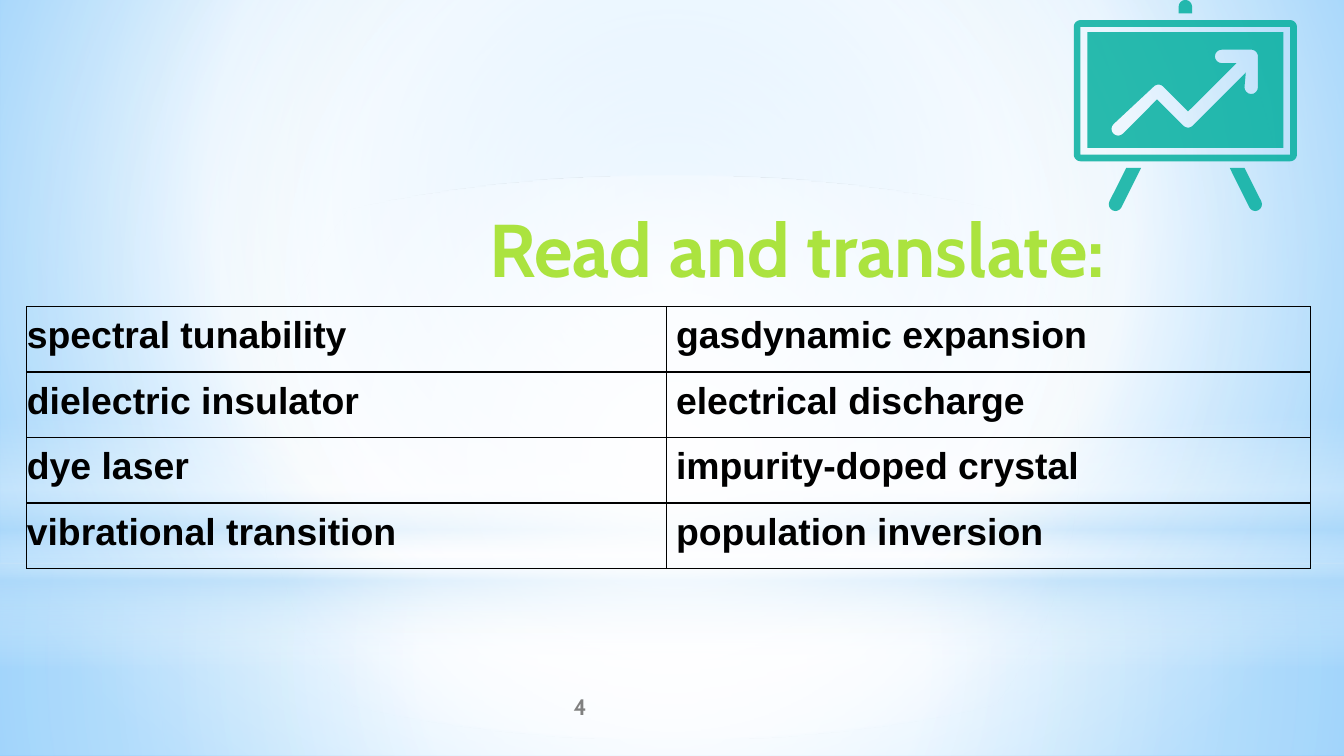
from dataclasses import dataclass
from math import cos, radians, sin

from lxml import etree
from pptx import Presentation
from pptx.dml.color import RGBColor
from pptx.enum.shapes import MSO_SHAPE
from pptx.enum.text import MSO_ANCHOR, MSO_AUTO_SIZE, PP_ALIGN
from pptx.oxml import parse_xml
from pptx.oxml.ns import nsdecls, qn
from pptx.util import Inches, Pt

RECT, OVAL = MSO_SHAPE.RECTANGLE, MSO_SHAPE.OVAL
TOP, LEFT, NO_FIT = MSO_ANCHOR.TOP, PP_ALIGN.LEFT, MSO_AUTO_SIZE.NONE


@dataclass(frozen=True)
class Theme:
    title: tuple = ("Cabin", 40, "ABE33F")
    number: tuple = ("Cabin", 12, "808080")
    term: tuple = ("Arial", 20, "000000")
    icon: str = "00AE9D"
    icon_alpha: int = 83
    border: str = "000000"
    white: str = "FFFFFF"
    sky: str = "B4DCFA"


THEME = Theme()
W = 10
H = W * 9 / 16
HORIZON = 4.19
CENTRE = (50, 50, 50, 50)

TITLE = "Read and translate:"
PAGE = "4"
TERMS = [
    ("spectral tunability", "gasdynamic expansion"),
    ("dielectric insulator", "electrical discharge"),
    ("dye laser", "impurity-doped crystal"),
    ("vibrational transition", "population inversion"),
]
COLUMNS, TABLE_HEIGHT = (4.76, 4.79), 1.95
INDENTS = (0, 0.07)

# Gradient stops: position, colour, opacity. The focus is a rectangle, or None for a vertical blend.
BACKDROP = ([(0, "9ED5FF", 100), (60, THEME.white, 100), (100, "5BB9FF", 100)], (20, 10, 20, 60))
LAYERS = [
    (RECT, (0, HORIZON, W, H - HORIZON),
     ([(0, THEME.white, 91), (37, THEME.white, 76), (100, THEME.sky, 79)], CENTRE)),
    (RECT, (0, 0, W, HORIZON),
     ([(0, THEME.white, 89), (48, THEME.white, 62), (100, THEME.sky, 79)], CENTRE)),
    (RECT, (0, 3.09, W, 1.88),
     ([(0, THEME.white, 0), (29, THEME.white, 30), (45, THEME.sky, 40),
       (55, THEME.white, 26), (65, THEME.sky, 60), (100, THEME.white, 0)], None)),
    (OVAL, (0, 1.31, W, HORIZON), ([(0, THEME.white, 100), (56, THEME.white, 0)], CENTRE)),
]


def arc(x, y, start, end, radius=0.05):
    """Points along an arc, in degrees clockwise from the right."""
    angles = [radians(start + (end - start) * step / 8) for step in range(9)]
    return [(x + radius * cos(a), y + radius * sin(a)) for a in angles]


def box(left, top, right, bottom):
    return [(left, top), (right, top), (right, bottom), (left, bottom)]


def mirrored(points, axis=8.82):
    return [(2 * axis - x, y) for x, y in points]


FRAME = (arc(8.04, 0.2, 180, 270) + arc(9.6, 0.2, 270, 360)
         + arc(9.6, 1.15, 0, 90) + arc(8.04, 1.15, 90, 180))
LEG = [(8.49, 1.25), (8.38, 1.25)] + arc(8.3, 1.52, 205, 25)
TREND_ARROW = (
    arc(9.31, 0.42, 270, 360) + arc(9.31, 0.65, 0, 180) + [(9.27, 0.54)]
    + arc(8.84, 0.9, 45, 135) + [(8.61, 0.74)] + arc(8.32, 0.96, 45, 225)
    + arc(8.62, 0.68, 225, 315) + [(8.84, 0.83), (9.2, 0.47)] + arc(9.09, 0.42, 90, 270))
EASEL = [
    [FRAME, box(8.04, 0.2, 9.6, 1.15)[::-1]],
    [arc(8.82, 0.05, 180, 360) + [(8.87, 0.1), (8.77, 0.1)]],
    [LEG],
    [mirrored(LEG)],
    [box(8.09, 0.24, 9.55, 1.1), TREND_ARROW[::-1]],
]


def paint_gradient(properties, stops, focus):
    """Swap the solid fill of a properties element for a gradient."""
    marks = "".join(
        f'<a:gs pos="{pos * 1000}"><a:srgbClr val="{color}">'
        f'<a:alpha val="{alpha * 1000}"/></a:srgbClr></a:gs>' for pos, color, alpha in stops)
    if focus:
        sides = " ".join(f'{side}="{share * 1000}"' for side, share in zip("ltrb", focus))
        direction = f'<a:path path="circle"><a:fillToRect {sides}/></a:path>'
    else:
        direction = '<a:lin ang="5400000" scaled="0"/>'
    gradient = parse_xml(f'<a:gradFill {nsdecls("a")} rotWithShape="1">'
                         f'<a:gsLst>{marks}</a:gsLst>{direction}</a:gradFill>')
    properties.replace(properties.find(qn("a:solidFill")), gradient)


def write(frame, text, style, margin, spacing=1.0):
    """Fill a text frame or table cell's frame with one bold, left-aligned line."""
    name, size, color = style
    for side in ("left", "top", "right", "bottom"):
        setattr(frame, f"margin_{side}", Inches(margin))
    frame.word_wrap = True
    line = frame.paragraphs[0]
    line.alignment, line.line_spacing = LEFT, spacing
    run = line.add_run()
    run.text = text
    for key, value in {"name": name, "size": Pt(size), "bold": True}.items():
        setattr(run.font, key, value)
    run.font.color.rgb = RGBColor.from_string(color)
    return line


def add_layers(slide):
    slide.background.fill.solid()
    paint_gradient(slide._element.find(".//" + qn("p:bgPr")), *BACKDROP)
    for kind, place, gradient in LAYERS:
        layer = slide.shapes.add_shape(kind, *map(Inches, place))
        layer.shadow.inherit = False
        layer.line.fill.background()
        layer.fill.solid()
        paint_gradient(layer._element.spPr, *gradient)


def add_title(slide):
    title = slide.shapes.title
    slide.shapes._spTree.append(title._element)  # in front of the background layers
    title.left, title.top, title.width, title.height = map(Inches, (3.54, 1.41, 6.46, 1.27))
    frame = title.text_frame
    frame.vertical_anchor, frame.auto_size = TOP, NO_FIT
    write(frame, TITLE, THEME.title, 0.1)


def add_easel(slide):
    easel = slide.shapes.add_group_shape()
    for contours in EASEL:
        outlines = [[(Inches(x), Inches(y)) for x, y in points] for points in contours]
        builder = easel.shapes.build_freeform(*outlines[0][0])
        builder.add_line_segments(outlines[0][1:])
        for hole in outlines[1:]:
            builder.move_to(*hole[0])
            builder.add_line_segments(hole[1:])
        part = builder.convert_to_shape()
        part.shadow.inherit = False
        part.line.fill.background()
        part.fill.solid()
        part.fill.fore_color.rgb = RGBColor.from_string(THEME.icon)
        color = part._element.spPr.find(qn("a:solidFill"))[0]
        etree.SubElement(color, qn("a:alpha")).set("val", str(THEME.icon_alpha * 1000))


def add_borders(cell):
    properties = cell._tc.get_or_add_tcPr()
    for index, side in enumerate(("lnL", "lnR", "lnT", "lnB")):
        properties.insert(index, parse_xml(
            f'<a:{side} {nsdecls("a")} w="{Pt(0.75)}"><a:solidFill>'
            f'<a:srgbClr val="{THEME.border}"/></a:solidFill></a:{side}>'))


def add_terms(slide):
    place = map(Inches, (0.2, 2.28, sum(COLUMNS), TABLE_HEIGHT))
    table = slide.shapes.add_table(len(TERMS), len(COLUMNS), *place).table
    table.first_row = table.horz_banding = False
    for column, width in zip(table.columns, COLUMNS):
        column.width = Inches(width)
    for r, pair in enumerate(TERMS):
        for c, term in enumerate(pair):
            cell = table.cell(r, c)
            for side in ("left", "top", "right", "bottom"):
                setattr(cell, f"margin_{side}", 0)
            cell.fill.background()
            line = write(cell.text_frame, term, THEME.term, 0, 1.2)
            line._p.get_or_add_pPr().set("marL", str(Inches(INDENTS[c])))
            add_borders(cell)


def main():
    deck = Presentation()
    deck.slide_width, deck.slide_height = Inches(W), Inches(H)
    slide = deck.slides.add_slide(deck.slide_layouts[5])
    add_layers(slide)
    number = slide.shapes.add_textbox(*map(Inches, (4.17, 5.06, 2, 0.3)))
    write(number.text_frame, PAGE, THEME.number, 0.1)
    add_title(slide)
    add_easel(slide)
    add_terms(slide)
    deck.save("out.pptx")


if __name__ == "__main__":
    main()
